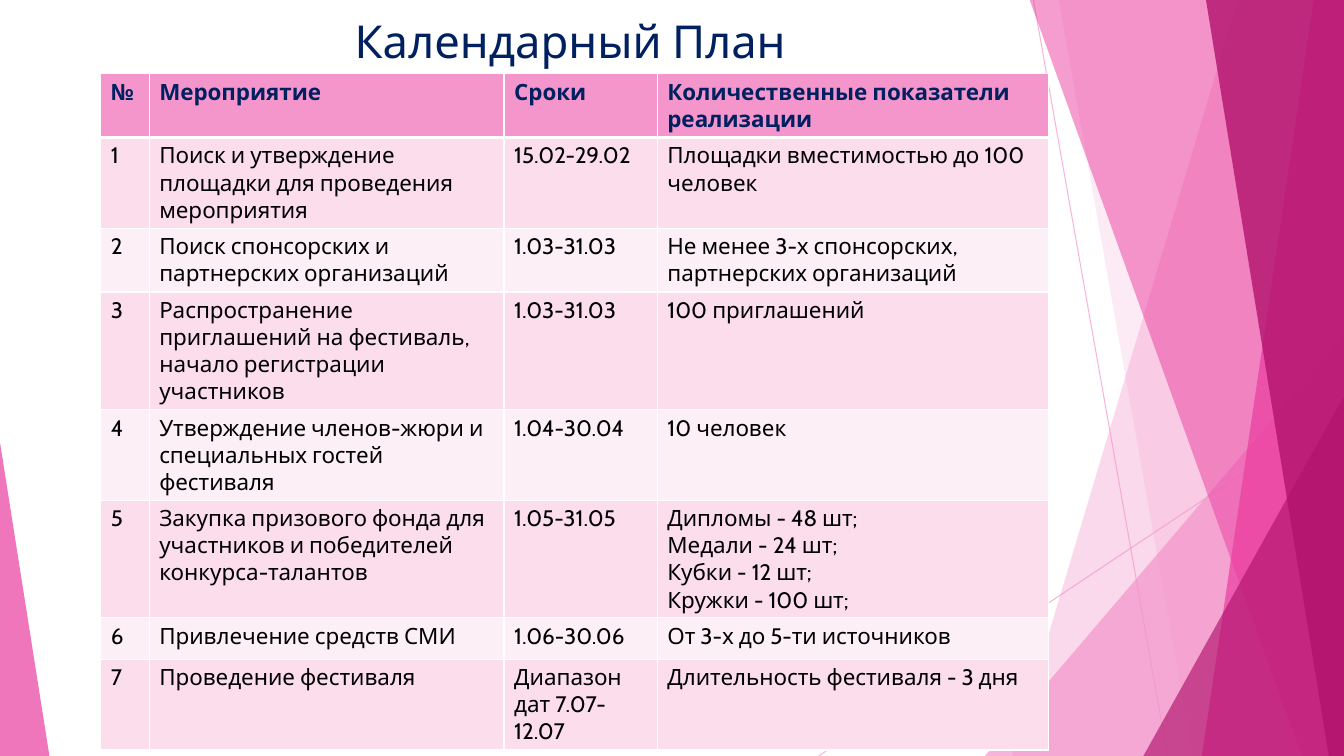
from lxml import etree
from pptx import Presentation
from pptx.dml.color import RGBColor
from pptx.enum.shapes import MSO_CONNECTOR, MSO_SHAPE
from pptx.enum.text import MSO_ANCHOR, PP_ALIGN
from pptx.oxml.ns import qn
from pptx.util import Inches, Pt

FONT = "Cabin"
COLORS = {
    "pink": "F496CB", "magenta": "EB3D9F", "berry": "B2136D",
    "odd_row": "FBDDEC", "even_row": "FDEFF6",
    "navy": "002060", "black": "000000", "white": "FFFFFF",
}
WIDTH, HEIGHT = 13.33, 7.5
TITLE = "Календарный План"
COLUMN_WIDTHS = [0.48, 3.52, 1.52, 3.88]
ROW_HEIGHT = 0.41
ROWS = [
    ("№", "Мероприятие", "Сроки", "Количественные показатели реализации"),
    ("1", "Поиск и утверждение площадки для проведения мероприятия",
     "15.02-29.02", "Площадки вместимостью до 100 человек"),
    ("2", "Поиск спонсорских и партнерских организаций",
     "1.03-31.03", "Не менее 3-х спонсорских, партнерских организаций"),
    ("3", "Распространение приглашений на фестиваль, начало регистрации участников",
     "1.03-31.03", "100 приглашений"),
    ("4", "Утверждение членов-жюри и специальных гостей фестиваля",
     "1.04-30.04", "10 человек"),
    ("5", "Закупка призового фонда для участников и победителей конкурса-талантов",
     "1.05-31.05", "Дипломы - 48 шт;\nМедали - 24 шт;\nКубки - 12 шт;\nКружки - 100 шт;"),
    ("6", "Привлечение средств СМИ", "1.06-30.06", "От 3-х до 5-ти источников"),
    ("7", "Проведение фестиваля", "Диапазон дат 7.07-12.07",
     "Длительность фестиваля - 3 дня"),
]
# Start x, start y, end x, end y
RAYS = [(10.25, 0, 11.58, HEIGHT), (WIDTH, 4.03, 8.12, HEIGHT)]
# Back to front. Band: top x, bottom x. Triangle: left, top, width, apex position
FACETS = [
    ("band", (12.28, 10.04), "pink", 36),
    ("band", (10.5, 11.83), "pink", 20),
    ("triangle", (9.77, 3.33, 3.56, 1), "pink", 72),
    ("band", (10.21, 12.91), "magenta", 50),
    ("band", (13.03, 11.92), "magenta", 70),
    ("band", (11.96, 13.18), "berry", 80),
    ("triangle", (11.34, 3.93, 1.99, 1), "berry", 66),
    ("triangle", (0, 4.39, 0.49, 0), "magenta", 70),
]


def rgb(name):
    return RGBColor.from_string(COLORS[name])


def set_opacity(shape, percent):
    """Apply opacity to the first solid colour of the shape (fill or line)."""
    color = next(shape._element.spPr.iter(qn("a:srgbClr")))
    etree.SubElement(color, qn("a:alpha")).set("val", str(percent * 1000))


def add_ray(slide, x1, y1, x2, y2):
    ray = slide.shapes.add_connector(
        MSO_CONNECTOR.STRAIGHT, *map(Inches, (x1, y1, x2, y2)))
    ray.line.color.rgb = rgb("pink")
    ray.line.width = Pt(0.75)
    set_opacity(ray, 70)
    etree.SubElement(ray._element.spPr, qn("a:effectLst"))


def add_band(slide, top_x, bottom_x):
    """Four-sided panel reaching the right edge of the slide."""
    top = -0.01
    corners = [(WIDTH, top), (WIDTH, HEIGHT), (bottom_x, HEIGHT)]
    builder = slide.shapes.build_freeform(Inches(top_x), Inches(top))
    builder.add_line_segments([(Inches(x), Inches(y)) for x, y in corners])
    return builder.convert_to_shape()


def add_triangle(slide, left, top, width, apex):
    """Triangle standing on the bottom edge of the slide."""
    triangle = slide.shapes.add_shape(
        MSO_SHAPE.ISOSCELES_TRIANGLE,
        *map(Inches, (left, top, width, HEIGHT - top)))
    triangle.adjustments[0] = apex
    return triangle


def add_facet(slide, kind, geometry, color, opacity):
    add = add_band if kind == "band" else add_triangle
    facet = add(slide, *geometry)
    facet.shadow.inherit = False
    facet.fill.solid()
    facet.fill.fore_color.rgb = rgb(color)
    facet.line.fill.background()
    set_opacity(facet, opacity)


def format_text(text_frame, size, color, bold=False):
    for paragraph in text_frame.paragraphs:
        for run in paragraph.runs:
            run.font.name = FONT
            run.font.size = Pt(size)
            run.font.bold = bold
            run.font.color.rgb = rgb(color)


def add_title(slide):
    title = slide.shapes.add_textbox(*map(Inches, (0.96, 0.06, 9.39, 0.68)))
    frame = title.text_frame
    frame.word_wrap = True
    frame.vertical_anchor = MSO_ANCHOR.MIDDLE
    frame.text = TITLE
    frame.paragraphs[0].alignment = PP_ALIGN.CENTER
    format_text(frame, 32.4, "navy")


def set_borders(cell, row_index):
    """White borders, with a thick rule under the header row."""
    widths = {"L": 1, "R": 1, "T": 3 if row_index == 1 else 1,
              "B": 3 if row_index == 0 else 1}
    properties = cell._tc.get_or_add_tcPr()
    for position, (side, width) in enumerate(widths.items()):
        border = etree.Element(qn(f"a:ln{side}"), w=str(Pt(width)))
        fill = etree.SubElement(border, qn("a:solidFill"))
        etree.SubElement(fill, qn("a:srgbClr"), val=COLORS["white"])
        properties.insert(position, border)


def add_plan(slide):
    table = slide.shapes.add_table(
        len(ROWS), len(COLUMN_WIDTHS), Inches(1), Inches(0.73),
        Inches(sum(COLUMN_WIDTHS)), Inches(ROW_HEIGHT * len(ROWS))).table
    for column, width in zip(table.columns, COLUMN_WIDTHS):
        column.width = Inches(width)
    for row_index, texts in enumerate(ROWS):
        is_header = row_index == 0
        fill = "pink" if is_header else "odd_row" if row_index % 2 else "even_row"
        table.rows[row_index].height = Inches(ROW_HEIGHT)
        for column_index, text in enumerate(texts):
            cell = table.cell(row_index, column_index)
            cell.text_frame.text = text
            format_text(cell.text_frame, 16, "navy" if is_header else "black", is_header)
            cell.fill.solid()
            cell.fill.fore_color.rgb = rgb(fill)
            set_borders(cell, row_index)


def main():
    presentation = Presentation()
    presentation.slide_width = Inches(WIDTH)
    presentation.slide_height = Inches(HEIGHT)
    slide = presentation.slides.add_slide(presentation.slide_layouts[6])
    for ray in RAYS:
        add_ray(slide, *ray)
    for facet in FACETS:
        add_facet(slide, *facet)
    add_title(slide)
    add_plan(slide)
    presentation.save("out.pptx")


if __name__ == "__main__":
    main()
